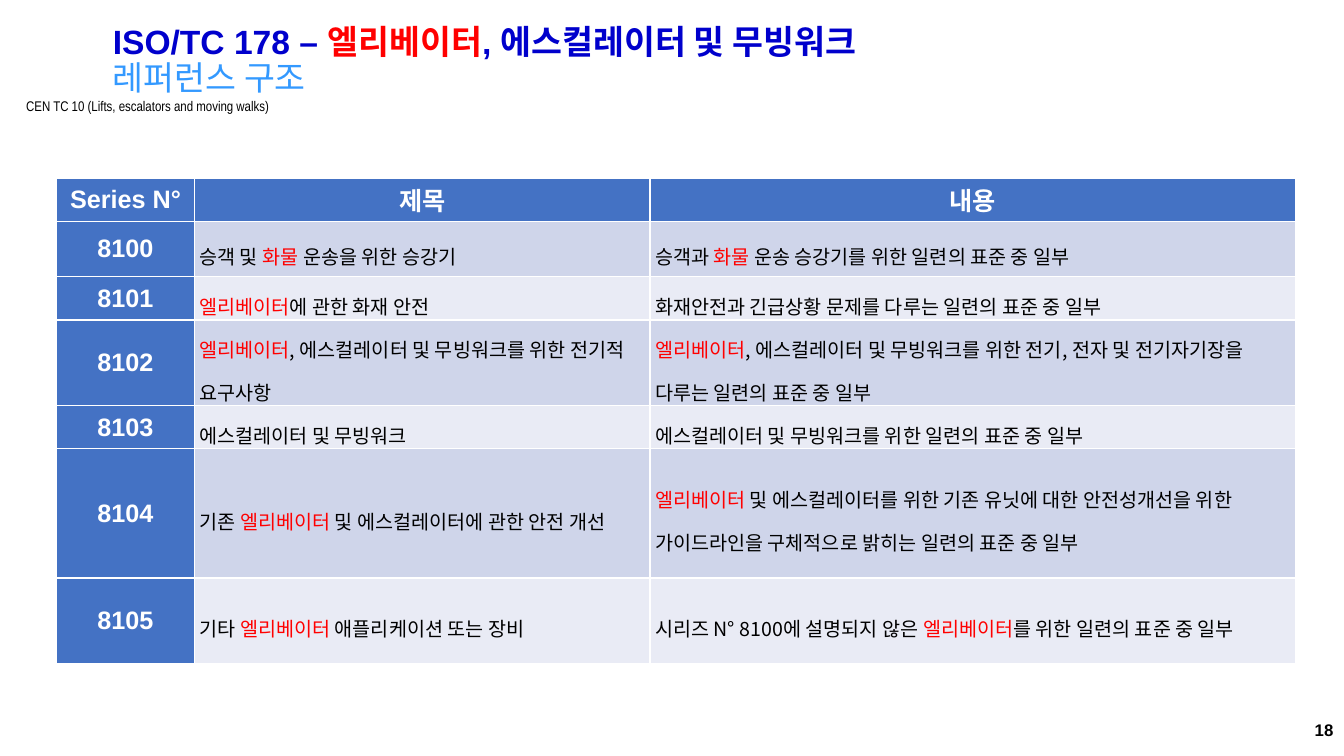
from pptx import Presentation
from pptx.dml.color import RGBColor
from pptx.enum import text as t
from pptx.util import Pt

KOREAN = "Noto Sans CJK KR"
BLUE, RED, WHITE, BLACK = "4472C4", "FF0000", "FFFFFF", "000000"
BANDS = ["CFD5EA", "E9EBF5"]
WIDTHS = [98.6, 325.4, 460.8]
HEIGHTS = [30.8, 39.6, 30.8, 61.3, 30.8, 92.2, 61.3]
HEADS = ["Series N°", "제목", "내용"]
# Words between bars are red.
SERIES = [
    ("8100", "승객 및 |화물| 운송을 위한 승강기",
     "승객과 |화물| 운송 승강기를 위한 일련의 표준 중 일부"),
    ("8101", "|엘리베이터|에 관한 화재 안전",
     "화재안전과 긴급상황 문제를 다루는 일련의 표준 중 일부"),
    ("8102", "|엘리베이터|, 에스컬레이터 및 무빙워크를 위한 전기적 요구사항",
     "|엘리베이터|, 에스컬레이터 및 무빙워크를 위한 전기, 전자 및 "
     "전기자기장을 다루는 일련의 표준 중 일부"),
    ("8103", "에스컬레이터 및 무빙워크",
     "에스컬레이터 및 무빙워크를 위한 일련의 표준 중 일부"),
    ("8104", "기존 |엘리베이터| 및 에스컬레이터에 관한 안전 개선",
     "|엘리베이터 |및 에스컬레이터를 위한 기존 유닛에 대한 안전성개선을 위한 "
     "가이드라인을 구체적으로 밝히는 일련의 표준 중 일부"),
    ("8105", "기타 |엘리베이터| 애플리케이션 또는 장비",
     "시리즈 N° 8100에 설명되지 않은 |엘리베이터|를 위한 일련의 표준 중 일부"),
]


def rgb(code):
    return RGBColor.from_string(code)


def style(para, name, size, color, bold=False):
    font = para.font
    font.name, font.size, font.bold = name, Pt(size), bold
    font.color.rgb = rgb(color)


def write(para, words, color):
    """Add runs, with the words between bars in red."""
    for i, part in enumerate(words.split("|")):
        if part:
            run = para.add_run()
            run.text = part
            run.font.color.rgb = rgb(RED if i % 2 else color)


def inset(frame, left=0, right=0):
    frame.margin_left, frame.margin_right = Pt(left), Pt(right)
    frame.margin_top = frame.margin_bottom = 0


def add_title(slide):
    title = slide.shapes.title
    title.left, title.top = Pt(80.6), Pt(18)
    title.width, title.height = Pt(856.8), Pt(52.6)
    frame = title.text_frame
    inset(frame, right=7.2)
    frame.vertical_anchor = t.MSO_ANCHOR.TOP
    frame.auto_size = t.MSO_AUTO_SIZE.NONE
    para = frame.paragraphs[0]
    para.alignment, para.line_spacing = t.PP_ALIGN.LEFT, 0.9
    style(para, "Arial", 24, "0000CC", True)
    write(para, "ISO/TC 178 – |엘리베이터|, 에스컬레이터 및 무빙워크", "0000CC")
    para.add_line_break()
    write(para, "레퍼런스 구조", "3399FF")
    para.runs[-1].font.bold = False


def add_label(slide, words, box, name, size, bold=False, wrap=True):
    frame = slide.shapes.add_textbox(*map(Pt, box)).text_frame
    inset(frame)
    frame.word_wrap = wrap
    para = frame.paragraphs[0]
    para.text = words
    style(para, name, size, BLACK, bold)
    return para


def fill_cell(cell, words, fill, head):
    cell.fill.solid()
    cell.fill.fore_color.rgb = rgb(fill)
    inset(cell, 3.6, 3.6)
    cell.vertical_anchor = t.MSO_ANCHOR.MIDDLE
    para = cell.text_frame.paragraphs[0]
    if head:
        para.alignment = t.PP_ALIGN.CENTER
        style(para, "Arial", 18, WHITE, True)
        write(para, words, WHITE)
    else:
        para.line_spacing = 1.5
        style(para, KOREAN, 14, BLACK)
        write(para, words, BLACK)


def add_series(slide):
    rows = [HEADS] + SERIES
    box = (40.3, 127.4, sum(WIDTHS), sum(HEIGHTS))
    table = slide.shapes.add_table(len(rows), len(HEADS), *map(Pt, box)).table
    table.first_col = True
    for col, width in zip(table.columns, WIDTHS):
        col.width = Pt(width)
    for row, height in zip(table.rows, HEIGHTS):
        row.height = Pt(height)
    for r, row in enumerate(rows):
        for c, words in enumerate(row):
            head = r == 0 or c == 0
            fill = BLUE if head else BANDS[(r - 1) % 2]
            fill_cell(table.cell(r, c), words, fill, head)


def main():
    prs = Presentation()
    prs.slide_width, prs.slide_height = Pt(960), Pt(540)
    slide = prs.slides.add_slide(prs.slide_layouts[5])
    add_title(slide)
    note = add_label(slide, "CEN TC 10 (Lifts, escalators and moving walks)",
                     (18.7, 72.7, 175, 9.4), "Arial Narrow", 10, wrap=False)
    note.line_spacing = 0.75
    page = add_label(slide, "18", (909.4, 514, 43, 14.4), "Arial", 12, True)
    page.alignment = t.PP_ALIGN.RIGHT
    add_series(slide)
    prs.save("out.pptx")


if __name__ == "__main__":
    main()
